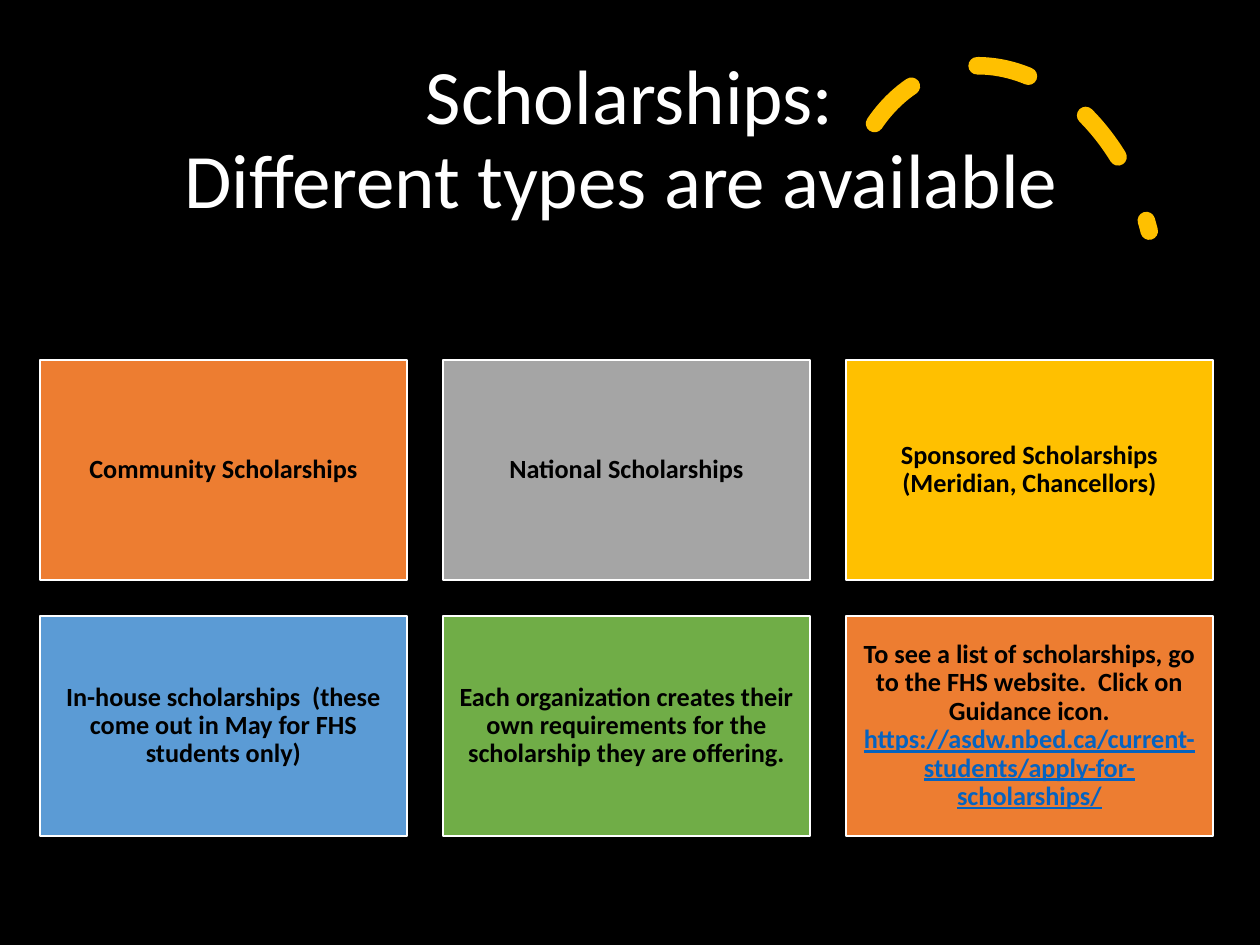
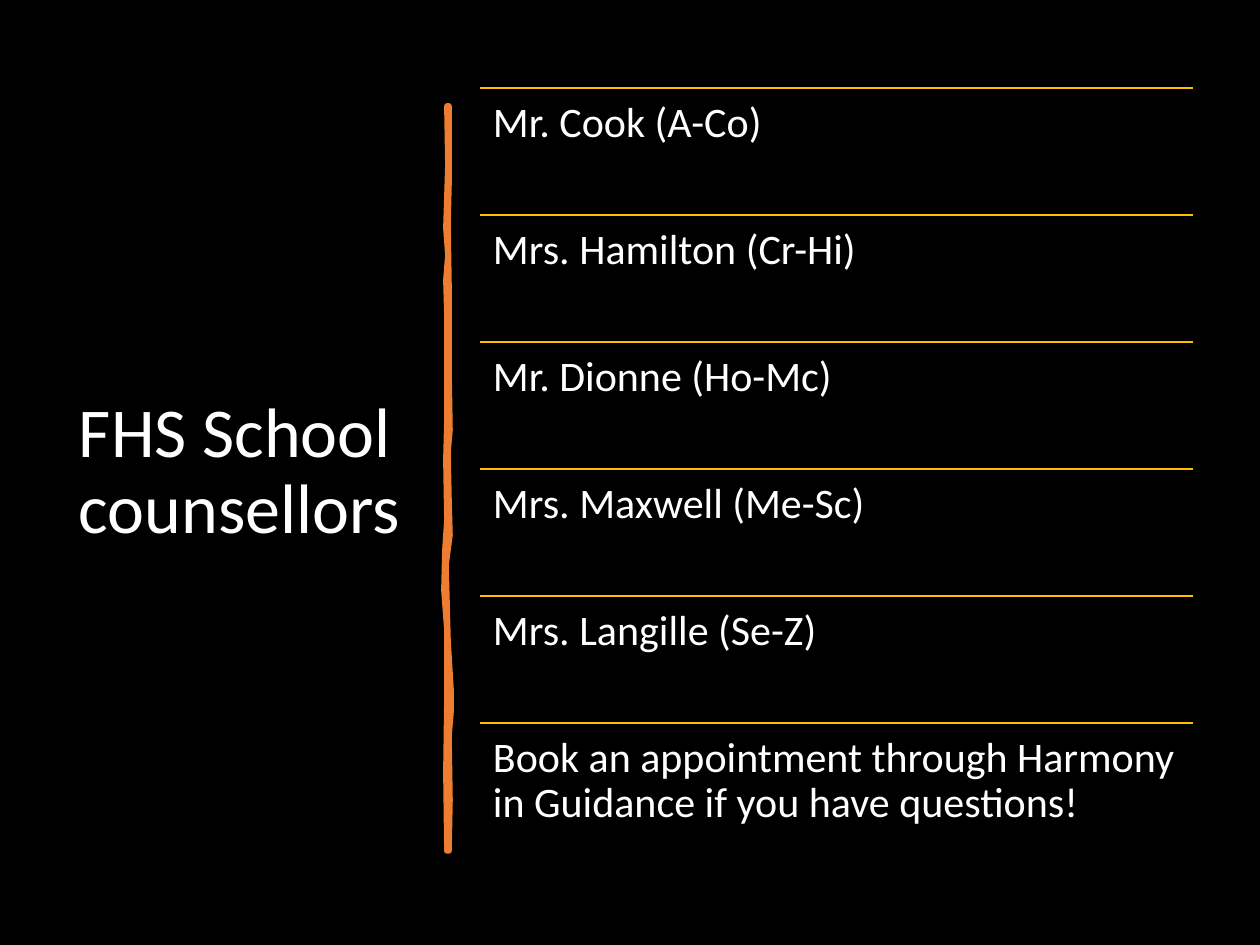
from itertools import cycle

from pptx import Presentation
from pptx import util as u
from pptx.dml.color import RGBColor
from pptx.enum import dml, shapes, text
from pptx.oxml.ns import qn
from lxml import etree

PX_PER_INCH = 126
FONT = "Calibri"
BLACK = RGBColor(0x00, 0x00, 0x00)
WHITE = RGBColor(0xFF, 0xFF, 0xFF)
ORANGE = RGBColor(0xED, 0x7D, 0x31)
GREY = RGBColor(0xA5, 0xA5, 0xA5)
GOLD = RGBColor(0xFF, 0xC0, 0x00)
BLUE = RGBColor(0x5B, 0x9B, 0xD5)
GREEN = RGBColor(0x70, 0xAD, 0x47)
LINK = RGBColor(0x05, 0x63, 0xC1)

TITLE = {"size": 44, "color": WHITE, "anchor": text.MSO_ANCHOR.MIDDLE, "inset": (13, 6)}
CARD = {"size": 15, "color": BLACK, "bold": True, "align": text.PP_ALIGN.CENTER,
        "anchor": text.MSO_ANCHOR.MIDDLE, "inset": (8, 8)}
ENTRY = {"size": 24, "color": WHITE, "inset": (13, 13)}

CARD_COLOURS = (ORANGE, GREY, GOLD, BLUE, GREEN)
CARDS = (
    ("Community Scholarships",),
    ("National Scholarships",),
    ("Sponsored Scholarships (Meridian, Chancellors)",),
    ("In-house scholarships  (these come out in May for FHS students only)",),
    ("Each organization creates their own requirements for the scholarship they are offering.",),
    ("To see a list of scholarships, go to the FHS website.  Click on Guidance icon. ",
     "https://asdw.nbed.ca/current-students/apply-for-scholarships/"),
)
COUNSELLORS = (
    "Mr. Cook (A-Co)",
    "Mrs. Hamilton (Cr-Hi)",
    "Mr. Dionne (Ho-Mc)",
    "Mrs. Maxwell (Me-Sc)",
    "Mrs. Langille (Se-Z)",
    "Book an appointment through Harmony in Guidance if you have questions!",
)
BRUSH_RIGHT = ((449, 106), (449, 184), (448, 225), (449, 285), (449, 370), (450, 430),
               (448, 452), (449, 500), (450, 535), (446, 565), (448, 640), (451, 690),
               (451, 712), (449, 736), (450, 800), (449, 851))
BRUSH_LEFT = ((447, 851), (446, 772), (447, 700), (447, 630), (444, 590), (445, 550),
              (447, 520), (446, 460), (447, 420), (447, 315), (446, 280), (448, 255),
              (446, 228), (448, 165), (447, 106))


def px(length):
    """Turn a length in px into EMU."""
    return u.Inches(length / PX_PER_INCH)


def set_all(target, values):
    """Set each named attribute of the target."""
    for name, value in values.items():
        setattr(target, name, value)


def set_line(shape, colour, width):
    """Give a shape or connector a solid line."""
    shape.line.color.rgb = colour
    shape.line.width = u.Pt(width)


def write(shape, spans, size, color, inset, bold=False,
          align=text.PP_ALIGN.LEFT, anchor=text.MSO_ANCHOR.TOP):
    """Write one paragraph, with any second span shown as a link."""
    side, end = (px(length) for length in inset)
    frame = shape.text_frame
    set_all(frame, {"word_wrap": True, "vertical_anchor": anchor,
                    "margin_left": side, "margin_right": side,
                    "margin_top": end, "margin_bottom": end})
    para = frame.paragraphs[0]
    set_all(para, {"alignment": align, "line_spacing": 0.9})
    for index, words in enumerate(spans):
        for number, line in enumerate(words.split("\n")):
            if number:
                para.add_line_break()
            span = para.add_run()
            span.text = line
            set_all(span.font, {"name": FONT, "size": u.Pt(size), "bold": bold,
                                "underline": True if index else None})
            span.font.color.rgb = LINK if index else color


def add_text(page, box, words, **style):
    """Add a text box with one paragraph."""
    write(page.shapes.add_textbox(*map(px, box)), (words,), **style)


def add_card(page, box, colour, spans):
    """Add a filled card with a white outline."""
    card = page.shapes.add_shape(shapes.MSO_SHAPE.RECTANGLE, *map(px, box))
    card.shadow.inherit = False
    card.fill.solid()
    card.fill.fore_color.rgb = colour
    set_line(card, WHITE, 1)
    write(card, spans, **CARD)


def add_rule(page, left, right, top):
    """Add a thin horizontal rule."""
    rule = page.shapes.add_connector(shapes.MSO_CONNECTOR.STRAIGHT,
                                     px(left), px(top), px(right), px(top))
    set_line(rule, GOLD, 1)
    etree.SubElement(rule._element.spPr, qn("a:effectLst"))


def add_dashed_arc(page, box):
    """Add the tilted arc with round-ended dashes."""
    arc = page.shapes.add_shape(shapes.MSO_SHAPE.ARC, *map(px, box))
    arc.shadow.inherit = False
    arc.fill.background()
    arc.rotation = 345.8
    arc.adjustments[0], arc.adjustments[1] = 146.13, 0
    set_line(arc, GOLD, 10)
    arc.line.dash_style = dml.MSO_LINE.DASH
    arc._element.spPr.find(qn("a:ln")).set("cap", "rnd")


def add_brush_stroke(page):
    """Add the uneven vertical stroke."""
    first, *rest = BRUSH_RIGHT + BRUSH_LEFT
    builder = page.shapes.build_freeform(*first, scale=px(1))
    builder.add_line_segments(rest, close=True)
    stroke = builder.convert_to_shape()
    stroke.shadow.inherit = False
    stroke.fill.solid()
    stroke.fill.fore_color.rgb = ORANGE
    set_line(stroke, ORANGE, 3.25)
    etree.SubElement(stroke._element.spPr.find(qn("a:ln")), qn("a:round"))


def add_page(deck):
    """Add a blank black page."""
    page = deck.slides.add_slide(deck.slide_layouts[6])
    page.background.fill.solid()
    page.background.fill.fore_color.rgb = BLACK
    return page


def build_scholarships(deck):
    """Build the page of scholarship types."""
    page = add_page(deck)
    add_dashed_arc(page, (845, 63, 309, 412))
    add_text(page, (87, 50, 1086, 183), "Scholarships:\nDifferent types are available ",
             **{**TITLE, "align": text.PP_ALIGN.CENTER})
    for index, (spans, colour) in enumerate(zip(CARDS, cycle(CARD_COLOURS))):
        row, column = divmod(index, 3)
        add_card(page, (40 + 403 * column, 360 + 256 * row, 367, 220), colour, spans)


def build_counsellors(deck):
    """Build the page of school counsellors."""
    page = add_page(deck)
    add_text(page, (66, 88, 353, 770), "FHS School counsellors", **{**TITLE, "size": 40})
    add_brush_stroke(page)
    for index, words in enumerate(COUNSELLORS):
        top = 88 + 127 * index
        add_rule(page, 480, 1193, top)
        add_text(page, (480, top, 713, 127), words, **ENTRY)


def main():
    """Build and save the deck."""
    deck = Presentation()
    set_all(deck, {"slide_width": px(1260), "slide_height": px(945)})
    build_scholarships(deck)
    build_counsellors(deck)
    deck.save("out.pptx")


if __name__ == "__main__":
    main()
